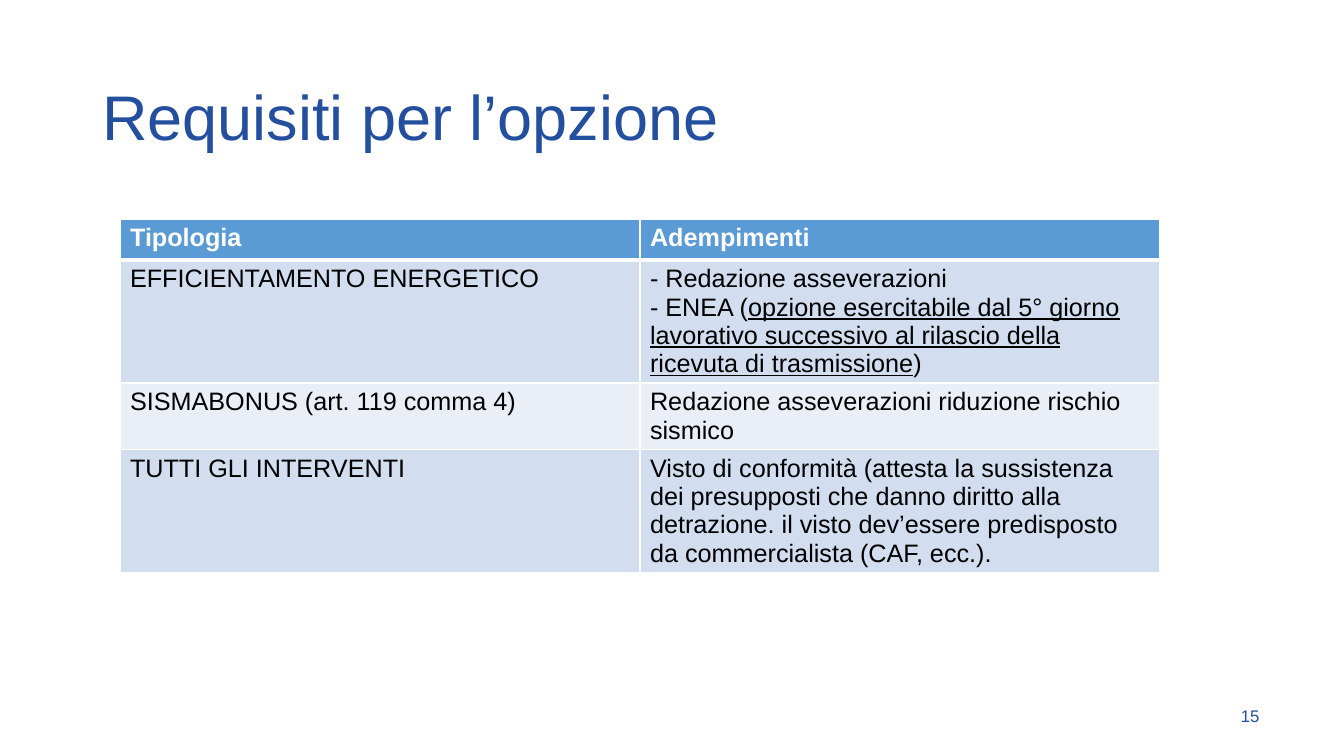
import pptx
import pptx.dml.color
import pptx.enum.text
import pptx.util
from lxml import etree

PX = 914400 / 100.8
FONT = "Arial"
COLORS = {
    "blue": "234F9E",
    "header": "5B9BD5",
    "band_dark": "D2DEEF",
    "band_light": "EAEFF7",
    "white": "FFFFFF",
    "black": "000000",
}
DRAWING = "http://schemas.openxmlformats.org/drawingml/2006/main"


def px(*lengths):
    return [pptx.util.Emu(round(length * PX)) for length in lengths]


def add_run(paragraph, text, size, color, bold=False, underline=False):
    run = paragraph.add_run()
    run.text = text
    run.font.name = FONT
    run.font.size = pptx.util.Pt(size)
    run.font.bold = bold
    run.font.underline = underline
    run.font.color.rgb = pptx.dml.color.RGBColor.from_string(COLORS[color])


presentation = pptx.Presentation()
presentation.slide_width, presentation.slide_height = px(1344, 756)
slide = presentation.slides.add_slide(presentation.slide_layouts[5])

# Title
title = slide.shapes.title
title.left, title.top, title.width, title.height = px(92, 88, 1159, 71)
title.text_frame.auto_size = pptx.enum.text.MSO_AUTO_SIZE.NONE
title.text_frame.vertical_anchor = pptx.enum.text.MSO_ANCHOR.BOTTOM
paragraph = title.text_frame.paragraphs[0]
paragraph.alignment = pptx.enum.text.PP_ALIGN.LEFT
paragraph.line_spacing = 0.9
add_run(paragraph, "Requisiti per l’opzione", 45, "blue")

# Table contents: cell > paragraph > (text, underlined)
rows = [
    [[[("Tipologia", False)]], [[("Adempimenti", False)]]],
    [
        [[("EFFICIENTAMENTO ENERGETICO", False)]],
        [
            [("- Redazione asseverazioni", False)],
            [
                ("- ENEA (", False),
                ("opzione esercitabile dal 5° giorno lavorativo successivo "
                 "al rilascio della ricevuta di trasmissione", True),
                (")", False),
            ],
        ],
    ],
    [
        [[("SISMABONUS (art. 119 comma 4)", False)]],
        [[("Redazione asseverazioni riduzione rischio sismico", False)]],
    ],
    [
        [[("TUTTI GLI INTERVENTI", False)]],
        [[("Visto di conformità (attesta la sussistenza dei presupposti che "
           "danno diritto alla detrazione. il visto dev’essere predisposto "
           "da commercialista (CAF, ecc.).", False)]],
    ],
]
row_heights = [41, 123, 66, 123]
row_fills = ["header", "band_dark", "band_light", "band_dark"]

# Table
table = slide.shapes.add_table(
    len(rows), 2, *px(120, 219, 1040, sum(row_heights))
).table
for row_index, row in enumerate(rows):
    table.rows[row_index].height = px(row_heights[row_index])[0]
    is_header = row_index == 0
    for column_index, paragraphs in enumerate(row):
        cell = table.cell(row_index, column_index)

        # White borders, thicker below the header
        border_widths = {
            "lnL": 1,
            "lnR": 1,
            "lnT": 3 if row_index == 1 else 1,
            "lnB": 3 if is_header else 1,
        }
        properties = cell._tc.get_or_add_tcPr()
        for side, width in border_widths.items():
            line = etree.SubElement(
                properties, f"{{{DRAWING}}}{side}", w=str(pptx.util.Pt(width))
            )
            fill = etree.SubElement(line, f"{{{DRAWING}}}solidFill")
            etree.SubElement(fill, f"{{{DRAWING}}}srgbClr", val=COLORS["white"])
        cell.fill.solid()
        cell.fill.fore_color.rgb = pptx.dml.color.RGBColor.from_string(
            COLORS[row_fills[row_index]]
        )

        # Cell text
        for paragraph_index, runs in enumerate(paragraphs):
            if paragraph_index == 0:
                paragraph = cell.text_frame.paragraphs[0]
            else:
                paragraph = cell.text_frame.add_paragraph()
            for text, underlined in runs:
                add_run(paragraph, text, 18, "white" if is_header else "black",
                        bold=is_header, underline=underlined)

# Page number
page_number = slide.shapes.add_textbox(*px(1231, 701, 85, 30))
page_number.text_frame.word_wrap = True
add_run(page_number.text_frame.paragraphs[0], "15", 12, "blue")

presentation.save("out.pptx")
